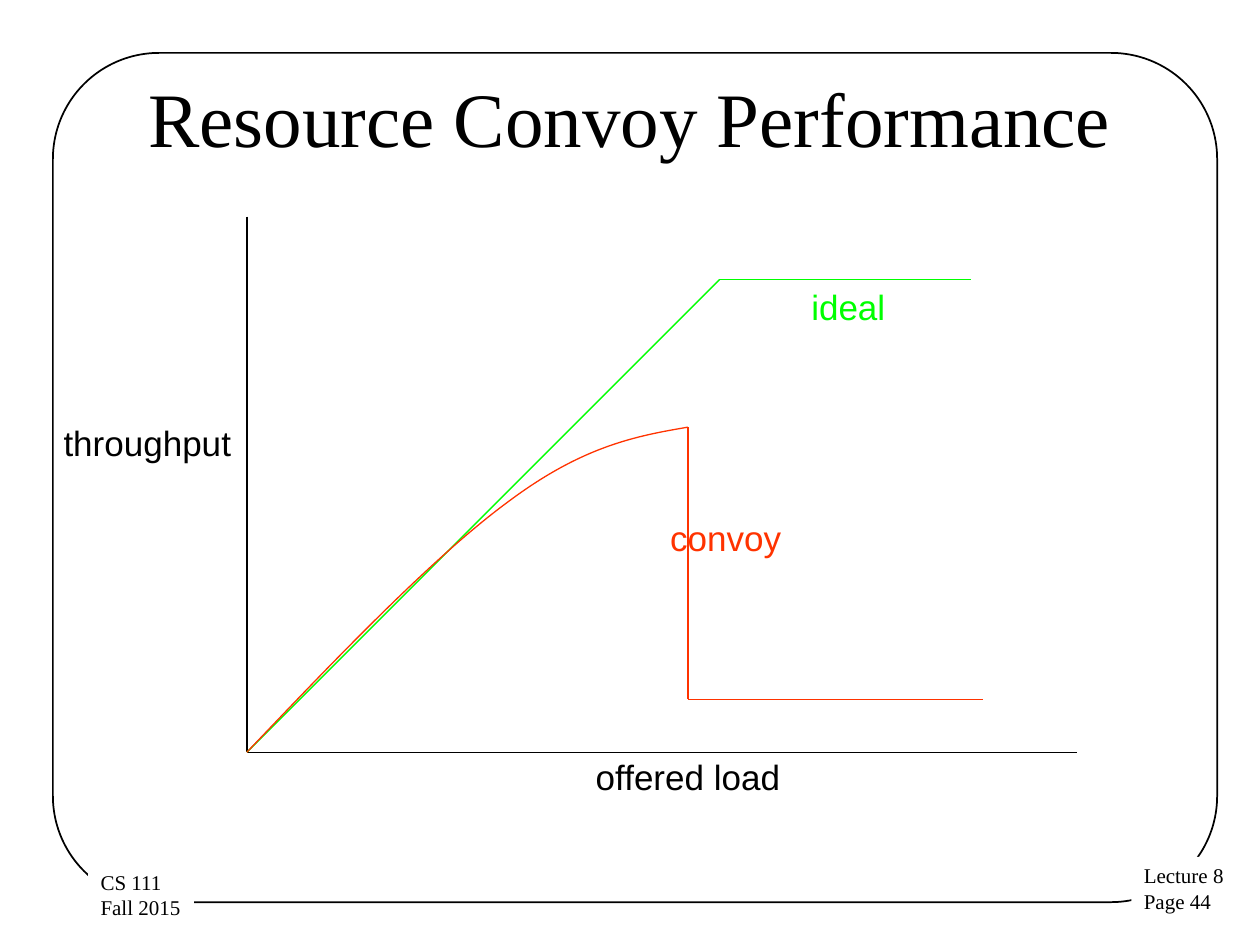
from lxml.etree import SubElement
from pptx import Presentation
from pptx.dml.color import RGBColor
from pptx.enum.shapes import MSO_CONNECTOR, MSO_SHAPE
from pptx.enum.text import MSO_ANCHOR, MSO_AUTO_SIZE, PP_ALIGN
from pptx.oxml.ns import qn
from pptx.util import Inches, Pt

BLACK = RGBColor(0, 0, 0)
WHITE = RGBColor(255, 255, 255)
GREEN = RGBColor(0, 255, 0)
RED = RGBColor(255, 51, 0)
SERIF = "Times New Roman"
SANS = "Arial"

presentation = Presentation()
presentation.slide_width = Inches(10)
presentation.slide_height = Inches(7.5)
slide = presentation.slides.add_slide(presentation.slide_layouts[6])
cell = presentation.slide_width / 100


def grid(*positions):
    return [round(position * cell) for position in positions]


def add_label(text, box, font_name, size, color, alignment=PP_ALIGN.LEFT):
    label = slide.shapes.add_textbox(*grid(*box))
    text_frame = label.text_frame
    text_frame.text = text
    text_frame.word_wrap = False
    text_frame.auto_size = MSO_AUTO_SIZE.SHAPE_TO_FIT_TEXT
    for paragraph in text_frame.paragraphs:
        paragraph.alignment = alignment
        font = paragraph.runs[0].font
        font.name = font_name
        font.size = Pt(size)
        font.color.rgb = color
    return label


frame = slide.shapes.add_shape(MSO_SHAPE.ROUNDED_RECTANGLE, *grid(4.2, 4.2, 92.4, 67.4))
frame.adjustments[0] = 0.125
frame.shadow.inherit = False
frame.fill.background()
frame.line.color.rgb = BLACK
frame.line.width = Pt(1)

for text, box in [
    ("Lecture 8\nPage 44", (89.8, 68, 8.4, 5.1)),
    ("CS 111\nFall 2015", (7, 68.5, 8.4, 5.1)),
]:
    corner = add_label(text, box, SERIF, 12, BLACK)
    corner.fill.solid()
    corner.fill.fore_color.rgb = WHITE

title = add_label("Resource Convoy Performance", (5, 3, 90, 12.5), SERIF, 44, BLACK, PP_ALIGN.CENTER)
title.text_frame.auto_size = MSO_AUTO_SIZE.NONE
title.text_frame.word_wrap = True
title.text_frame.vertical_anchor = MSO_ANCHOR.MIDDLE

add_label("throughput", (3.7, 33, 16, 4.3), SANS, 20, BLACK, PP_ALIGN.CENTER)
add_label("offered load", (46.3, 59.5, 16.7, 4.3), SANS, 20, BLACK)
add_label("ideal", (63.4, 22.2, 7.9, 4.3), SANS, 20, GREEN)
add_label("convoy", (52.2, 40.5, 10.8, 4.3), SANS, 20, RED)

origin = (19.6, 59.7)
saturation = (57.1, 22.2)
collapse_top = (54.6, 33.9)
collapse_bottom = (54.6, 55.5)

for start, end, color in [
    ((19.6, 17.2), origin, BLACK),
    (origin, (85.5, 59.7), BLACK),
    (origin, saturation, GREEN),
    (saturation, (77.1, 22.2), GREEN),
    (collapse_top, collapse_bottom, RED),
    (collapse_bottom, (78, 55.5), RED),
]:
    connector = slide.shapes.add_connector(MSO_CONNECTOR.STRAIGHT, *grid(*start, *end))
    connector.line.color.rgb = color
    connector.line.width = Pt(0.75)
    SubElement(connector.element.spPr, qn("a:effectLst"))

curve_points = [(27.1, 51.8), (34.6, 44), (40.5, 39.7), (46.3, 35.4), (50.5, 34.6), collapse_top]
builder = slide.shapes.build_freeform(*grid(*origin))
builder.add_line_segments([grid(*point) for point in curve_points], close=False)
convoy_curve = builder.convert_to_shape()
convoy_curve.shadow.inherit = False
convoy_curve.fill.background()
convoy_curve.line.color.rgb = RED
convoy_curve.line.width = Pt(0.75)

segments = convoy_curve.element.xpath(".//a:lnTo")
outline = segments[0].getparent()
for first in range(0, len(segments), 3):
    bezier = SubElement(outline, qn("a:cubicBezTo"))
    for segment in segments[first:first + 3]:
        bezier.append(segment[0])
        outline.remove(segment)

presentation.save("out.pptx")
